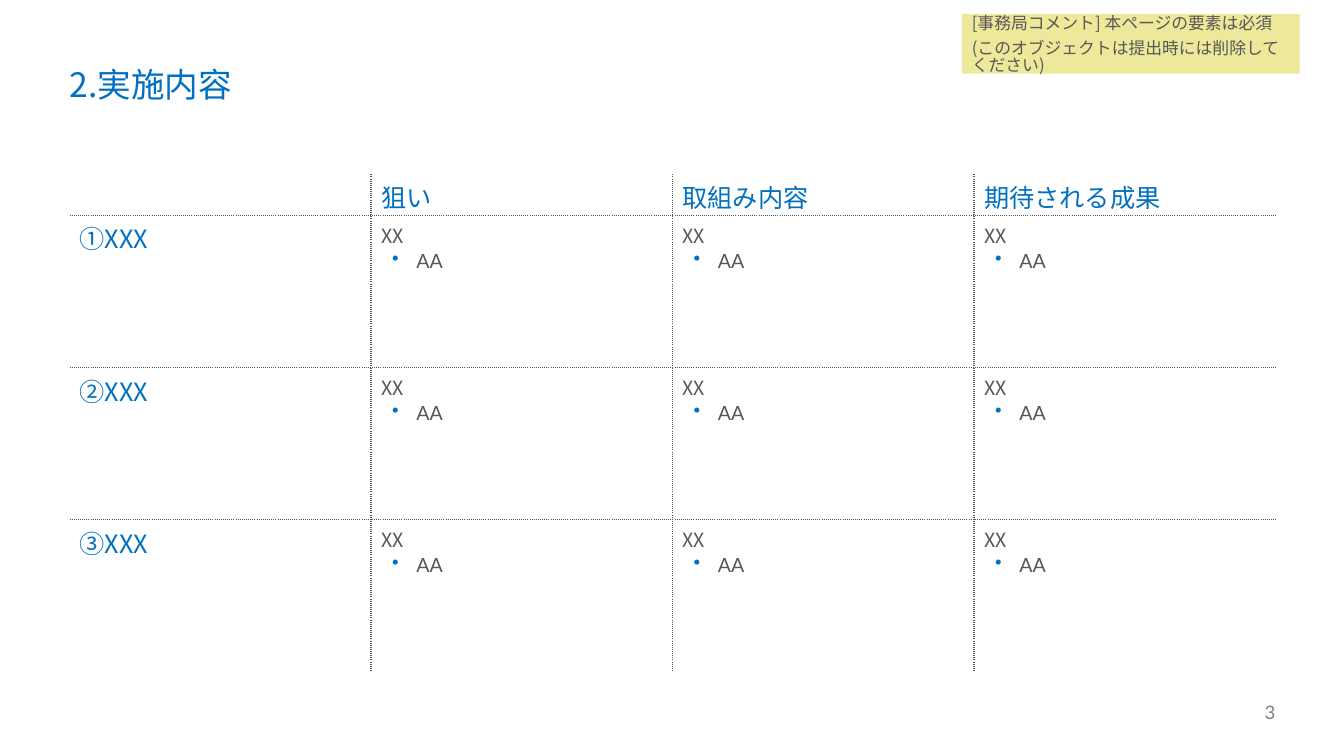
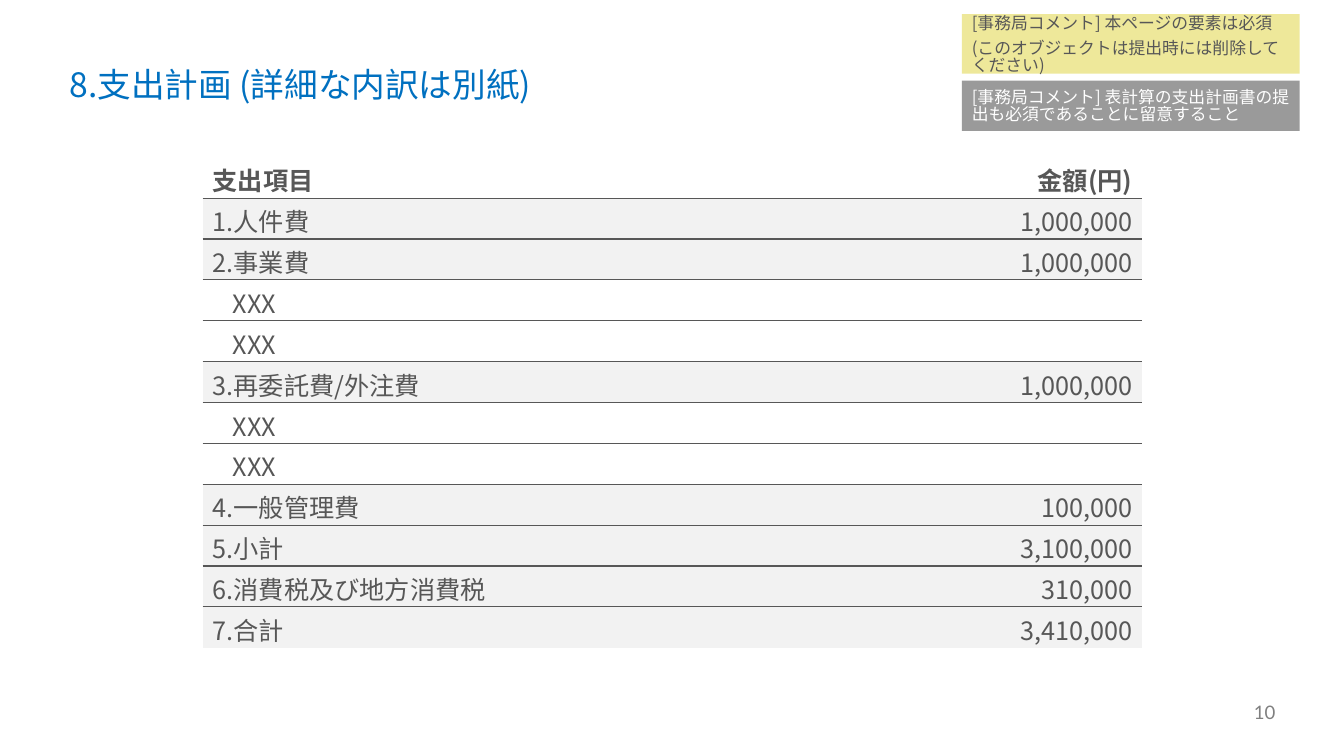
import pptx
import pptx.util
import pptx.dml.color
import pptx.enum.shapes
import pptx.enum.text
import pptx.oxml.ns
from lxml import etree

Inches, Pt = pptx.util.Inches, pptx.util.Pt
ALIGN, ANCHOR = pptx.enum.text.PP_ALIGN, pptx.enum.text.MSO_ANCHOR
qn = pptx.oxml.ns.qn

# Content
NOTE = ["[事務局コメント] 本ページの要素は必須", "(このオブジェクトは提出時には削除してください)"]
SHEET = ["[事務局コメント] 表計算の支出計画書の提出も必須であることに留意すること"]
HEADS = ["", "狙い", "取組み内容", "期待される成果"]
TASKS = ["①XXX", "②XXX", "③XXX"]
POINT = ["XX", "AA"]
COSTS = [
    ("支出項目", "金額(円)"),
    ("1.人件費", "1,000,000"),
    ("2.事業費", "1,000,000"),
    ("XXX", ""),
    ("XXX", ""),
    ("3.再委託費/外注費", "1,000,000"),
    ("XXX", ""),
    ("XXX", ""),
    ("4.一般管理費", "100,000"),
    ("5.小計", "3,100,000"),
    ("6.消費税及び地方消費税", "310,000"),
    ("7.合計", "3,410,000"),
]

# Shared style
HEX = {"blue": "0070C0", "text": "575757", "page": "808080", "note": "EEE89A",
       "gray": "9A9A9A", "band": "F2F2F2", "white": "FFFFFF"}
SANS, LATO = "Noto Sans CJK JP", "Lato"
PLAIN = "{2D5ABB26-0587-4C30-8999-92F81FD0307C}"
LEFT, WIDE = 0.69, 11.96


def rgb(key):
    return pptx.dml.color.RGBColor.from_string(HEX[key])


def style(para, size, color, face=SANS, bold=False):
    for run in para.runs:
        font = run.font
        font.size, font.bold, font.name = Pt(size), bold, face
        font.color.rgb = rgb(color)
        etree.SubElement(run._r.get_or_add_rPr(), qn("a:ea"), typeface=face)


def indent(para, left, first=0):
    prop = para._p.get_or_add_pPr()
    prop.set("marL", str(Inches(left)))
    prop.set("indent", str(Inches(first)))
    return prop


def bullet(para):
    para.level = 1
    prop = indent(para, 0.35, -0.24)
    tint = etree.SubElement(prop, qn("a:buClr"))
    etree.SubElement(tint, qn("a:srgbClr"), val=HEX["blue"])
    etree.SubElement(prop, qn("a:buChar"), char="•")


def frame(shape, text, anchor, pads):
    box = shape.text_frame
    box.word_wrap = True
    box.auto_size = pptx.enum.text.MSO_AUTO_SIZE.NONE
    box.vertical_anchor = anchor
    box.margin_left, box.margin_top, box.margin_right, box.margin_bottom = map(Inches, pads)
    box.text = text
    return box.paragraphs


def note(slide, top, high, lines, fill, color):
    rect = slide.shapes.add_shape(pptx.enum.shapes.MSO_SHAPE.RECTANGLE, Inches(9.54),
                                  Inches(top), Inches(3.35), Inches(high))
    rect.shadow.inherit = False
    rect.fill.solid()
    rect.fill.fore_color.rgb = rgb(fill)
    rect.line.fill.background()
    for para in frame(rect, "\n".join(lines), ANCHOR.MIDDLE, (0.1, 0.08, 0.1, 0.05)):
        para.alignment = ALIGN.LEFT
        para.line_spacing, para.space_after = 0.83, Pt(6)
        style(para, 12, color)


def page(deck, name, number):
    slide = deck.slides.add_slide(deck.slide_layouts[5])
    title = slide.shapes.title
    title.left, title.top = Inches(LEFT), Inches(0.68)
    title.width, title.height = Inches(WIDE), Inches(0.36)
    para = frame(title, name, ANCHOR.MIDDLE, (0, 0, 0, 0))[0]
    para.alignment, para.line_spacing = ALIGN.LEFT, 0.9
    style(para, 24, "blue")
    box = slide.shapes.add_textbox(Inches(12.09), Inches(6.95), Inches(0.56), Inches(0.22))
    para = frame(box, str(number), ANCHOR.BOTTOM, (0, 0, 0, 0))[0]
    para.alignment = ALIGN.RIGHT
    style(para, 13.3, "page", LATO)
    return slide


def grid(slide, left, top, cols, rows):
    shape = slide.shapes.add_table(len(rows), len(cols), Inches(left), Inches(top),
                                   Inches(sum(cols)), Inches(sum(rows)))
    table = shape.table
    table.first_row = table.horz_banding = False
    table._tbl.tblPr.find(qn("a:tableStyleId")).text = PLAIN
    for col, size in zip(table.columns, cols):
        col.width = Inches(size)
    for row, size in zip(table.rows, rows):
        row.height = Inches(size)
    return table


def edges(cell, sides, dash):
    prop = cell._tc.get_or_add_tcPr()
    for side in "LRTB":
        line = etree.SubElement(prop, qn("a:ln" + side), w=str(Pt(1)))
        if side in sides:
            fill = etree.SubElement(line, qn("a:solidFill"))
            etree.SubElement(fill, qn("a:srgbClr"), val=HEX["text"])
            etree.SubElement(line, qn("a:prstDash"), val=dash)
        else:
            etree.SubElement(line, qn("a:noFill"))


def fill_cell(cell, text, sides, dash="solid", band=False):
    edges(cell, sides, dash)
    cell.margin_bottom = 0
    if band:
        cell.fill.solid()
        cell.fill.fore_color.rgb = rgb("band")
    else:
        cell.fill.background()
    cell.text_frame.text = text
    return cell.text_frame.paragraphs


def plan(deck):
    slide = page(deck, "2.実施内容", 3)
    body = [HEADS] + [[task] + ["\n".join(POINT)] * 3 for task in TASKS]
    table = grid(slide, LEFT, 1.73, [WIDE / 4] * 4, [0.4] + [1.51] * 3)
    for r, row in enumerate(body):
        for c, text in enumerate(row):
            # Inner lines only
            sides = "L" * (c > 0) + "R" * (c < 3) + "T" * (r > 0) + "B" * (r < 3)
            paras = fill_cell(table.cell(r, c), text, sides, "sysDot")
            if r and c:
                style(paras[0], 14, "text")
                bullet(paras[1])
                style(paras[1], 14, "text", LATO)
            else:
                paras[0].line_spacing = 0.98
                if r:
                    indent(paras[0], 0.22, -0.22)
                style(paras[0], 18, "blue")
    note(slide, 0.14, 0.59, NOTE, "note", "text")


def budget(deck):
    slide = page(deck, "8.支出計画 (詳細な内訳は別紙)", 10)
    last = len(COSTS) - 1
    table = grid(slide, 2.01, 1.56, [3.91, 5.41], [4.87 / len(COSTS)] * len(COSTS))
    for r, row in enumerate(COSTS):
        sub = not row[1]
        sides = "T" * (r > 0) + "B" * (r < last)
        for c, text in enumerate(row):
            para = fill_cell(table.cell(r, c), text, sides, band=r > 0 and not sub)[0]
            para.line_spacing = 0.98
            para.alignment = ALIGN.RIGHT if c else ALIGN.LEFT
            if sub and not c:
                indent(para, 0.2)
            style(para, 18, "text", bold=r == 0)
    note(slide, 0.8, 0.5, SHEET, "gray", "white")
    note(slide, 0.14, 0.59, NOTE, "note", "text")


def main():
    deck = pptx.Presentation()
    deck.slide_width, deck.slide_height = Inches(13.33), Inches(7.5)
    plan(deck)
    budget(deck)
    deck.save("out.pptx")


if __name__ == "__main__":
    main()
